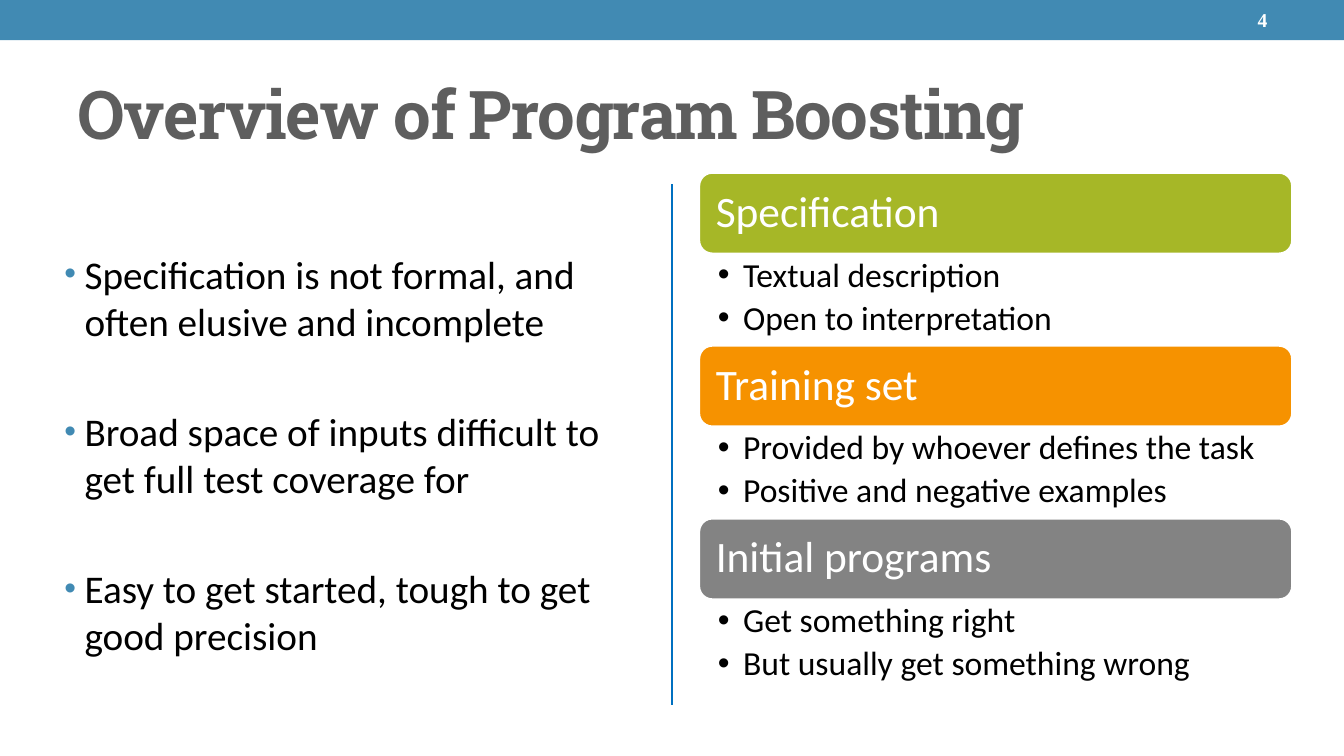
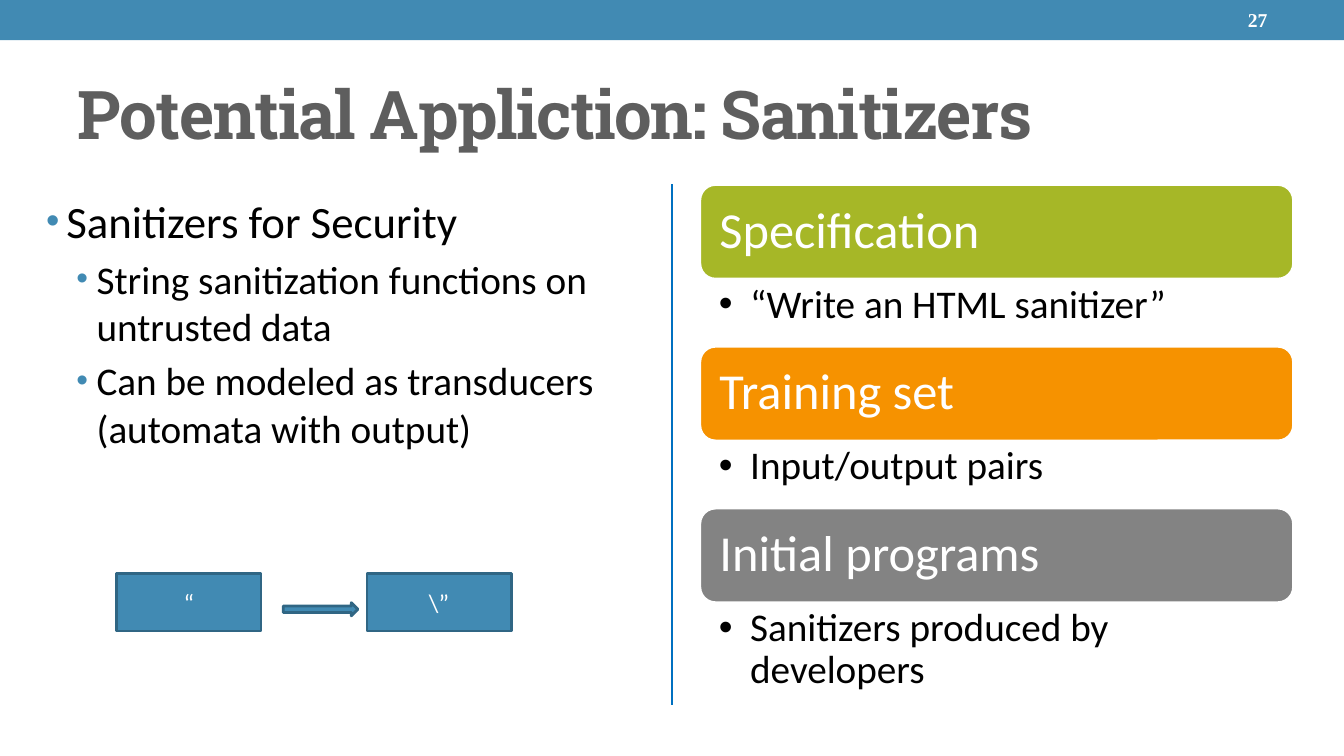
from lxml.etree import SubElement
from pptx import Presentation
from pptx.dml.color import RGBColor
from pptx.enum.shapes import MSO_CONNECTOR, MSO_SHAPE
from pptx.enum.text import MSO_ANCHOR, PP_ALIGN
from pptx.oxml.ns import qn
from pptx.util import Inches, Pt

BLUE = RGBColor(0x41, 0x8A, 0xB3)
DARK_BLUE = RGBColor(0x30, 0x66, 0x84)
DIVIDER = RGBColor(0x00, 0x70, 0xC0)
GREY = RGBColor(0x5E, 0x5E, 0x5E)
WHITE = RGBColor(0xFF, 0xFF, 0xFF)
BLACK = RGBColor(0x00, 0x00, 0x00)
CARD_COLOURS = (
    RGBColor(0xA6, 0xB7, 0x27),
    RGBColor(0xF6, 0x92, 0x00),
    RGBColor(0x83, 0x83, 0x83),
)
BODY_FONT, TITLE_FONT, NUMBER_FONT = "Calibri", "Roboto Slab", "Times New Roman"
WIDTH, HEIGHT = 13.33, 7.5
OUTLINE = 2.08
CARD_WIDTH = 5.89
CARD_HEADINGS = ("Specification", "Training set", "Initial programs")
BULLET_SIZES = (32, 28)
BULLET_INDENTS = (0.2, 0.5)

SLIDES = [
    {
        "number": "4",
        "title": "Overview of Program Boosting",
        "bullets": [
            (1, "Specification is not formal, and often elusive and incomplete"),
            (1, "Broad space of inputs difficult to get full test coverage for"),
            (1, "Easy to get started, tough to get good precision"),
        ],
        "bullet_box": (0.24, 2.43, 6.19, 4.6),
        "bullet_gap": 45,
        "details": [
            ["Textual description", "Open to interpretation"],
            ["Provided by whoever defines the task", "Positive and negative examples"],
            ["Get something right", "But usually get something wrong"],
        ],
        "cards": {
            "left": 6.93, "top": 1.71, "pitch": 1.715, "heading": 0.81,
            "heading_size": 31, "detail_size": 24,
            "padding": 0.13, "margins": (0.19, 0.04, 0.24, 0.04), "indent": 0.25,
        },
        "example": [],
    },
    {
        "number": "27",
        "title": "Potential Appliction: Sanitizers",
        "bullets": [
            (0, "Sanitizers for Security"),
            (1, "String sanitization functions on untrusted data"),
            (1, "Can be modeled as transducers (automata with output)"),
        ],
        "bullet_box": (0.36, 1.87, 5.89, 4.03),
        "bullet_gap": 5.5,
        "details": [
            ["“Write an HTML sanitizer”"],
            ["Input/output pairs"],
            ["Sanitizers produced by developers"],
        ],
        "cards": {
            "left": 6.94, "top": 1.83, "pitch": 1.605, "heading": 0.94,
            "heading_size": 36, "detail_size": 28,
            "padding": 0.15, "margins": (0.19, 0.05, 0.28, 0.05), "indent": 0.31,
        },
        "example": ["“", "\\”"],
    },
]


def style(paragraph, size, colour, font=BODY_FONT, bold=False):
    for run in paragraph.runs:
        run.font.size = Pt(size)
        run.font.name = font
        run.font.bold = bold
        run.font.color.rgb = colour


def add_bullet(paragraph, indent, hanging, colour=None, percent=100):
    properties = paragraph._p.get_or_add_pPr()
    properties.set("marL", str(Inches(indent)))
    properties.set("indent", str(-Inches(hanging)))
    if colour is not None:
        fill = SubElement(properties, qn("a:buClr"))
        SubElement(fill, qn("a:srgbClr")).set("val", str(colour))
    SubElement(properties, qn("a:buSzPct")).set("val", str(percent * 1000))
    SubElement(properties, qn("a:buFont")).set("typeface", "Arial")
    SubElement(properties, qn("a:buChar")).set("char", "•")


def set_margins(frame, margins):
    frame.margin_left, frame.margin_top, frame.margin_right, frame.margin_bottom = map(Inches, margins)


def add_text(slide, box, lines, anchor=MSO_ANCHOR.TOP):
    frame = slide.shapes.add_textbox(*map(Inches, box)).text_frame
    frame.word_wrap = True
    frame.vertical_anchor = anchor
    frame.text = "\n".join(lines)
    return frame


def add_block(slide, kind, box, fill, line=None):
    block = slide.shapes.add_shape(kind, *map(Inches, box))
    block.shadow.inherit = False
    block.fill.solid()
    block.fill.fore_color.rgb = fill
    if line is None:
        block.line.fill.background()
    else:
        block.line.color.rgb = line
        block.line.width = Pt(OUTLINE)
    return block


def add_frame(slide, title, number):
    add_block(slide, MSO_SHAPE.RECTANGLE, (0, 0, WIDTH, 0.4), BLUE)
    middle = Inches(WIDTH / 2)
    divider = slide.shapes.add_connector(
        MSO_CONNECTOR.STRAIGHT, middle, Inches(1.83), middle, Inches(6.99))
    divider.line.color.rgb = DIVIDER
    divider.line.width = Pt(1.5)
    SubElement(divider._element.spPr, qn("a:effectLst"))

    heading = add_text(slide, (0.67, 0.58, 12, 1.08), [title], MSO_ANCHOR.MIDDLE).paragraphs[0]
    style(heading, 48, GREY, TITLE_FONT, True)
    heading.runs[0].font._element.set("spc", "-100")

    page = add_text(slide, (11.11, 0.02, 1.56, 0.36), [number], MSO_ANCHOR.MIDDLE).paragraphs[0]
    page.alignment = PP_ALIGN.RIGHT
    style(page, 14, WHITE, NUMBER_FONT, True)


def add_bullets(slide, bullets, box, gap):
    frame = add_text(slide, box, [text for _, text in bullets])
    for index, (paragraph, (level, _)) in enumerate(zip(frame.paragraphs, bullets)):
        paragraph.level = level
        paragraph.space_before = Pt(gap if index else 0)
        add_bullet(paragraph, BULLET_INDENTS[level], 0.2, BLUE, 85)
        style(paragraph, BULLET_SIZES[level], BLACK)


def add_cards(slide, details, cards):
    for index, (heading, colour, lines) in enumerate(zip(CARD_HEADINGS, CARD_COLOURS, details)):
        top = cards["top"] + index * cards["pitch"]
        card = add_block(slide, MSO_SHAPE.ROUNDED_RECTANGLE,
                         (cards["left"], top, CARD_WIDTH, cards["heading"]), colour, WHITE)
        frame = card.text_frame
        frame.text = heading
        frame.vertical_anchor = MSO_ANCHOR.MIDDLE
        set_margins(frame, [cards["padding"]] * 4)
        label = frame.paragraphs[0]
        label.alignment = PP_ALIGN.LEFT
        label.line_spacing = 0.9
        style(label, cards["heading_size"], WHITE)

        detail_box = (cards["left"], top + cards["heading"], CARD_WIDTH,
                      cards["pitch"] - cards["heading"])
        detail = add_text(slide, detail_box, lines)
        set_margins(detail, cards["margins"])
        for paragraph in detail.paragraphs:
            paragraph.line_spacing = 0.9
            paragraph.space_after = Pt(cards["detail_size"] * 0.2)
            add_bullet(paragraph, cards["indent"], cards["indent"])
            style(paragraph, cards["detail_size"], BLACK)


def add_example(slide, strings):
    for index, string in enumerate(strings):
        box = add_block(slide, MSO_SHAPE.RECTANGLE,
                        (1.16 + index * 2.48, 5.69, 1.43, 0.57), BLUE, DARK_BLUE)
        box.text_frame.text = string
        box.text_frame.vertical_anchor = MSO_ANCHOR.MIDDLE
        box.text_frame.paragraphs[0].alignment = PP_ALIGN.CENTER
        style(box.text_frame.paragraphs[0], 18, WHITE)
    if strings:
        add_block(slide, MSO_SHAPE.RIGHT_ARROW, (2.81, 5.98, 0.74, 0.13), BLUE, DARK_BLUE)


def main():
    deck = Presentation()
    deck.slide_width, deck.slide_height = Inches(WIDTH), Inches(HEIGHT)
    for content in SLIDES:
        slide = deck.slides.add_slide(deck.slide_layouts[6])
        add_frame(slide, content["title"], content["number"])
        add_cards(slide, content["details"], content["cards"])
        add_bullets(slide, content["bullets"], content["bullet_box"], content["bullet_gap"])
        add_example(slide, content["example"])
    deck.save("out.pptx")


if __name__ == "__main__":
    main()
